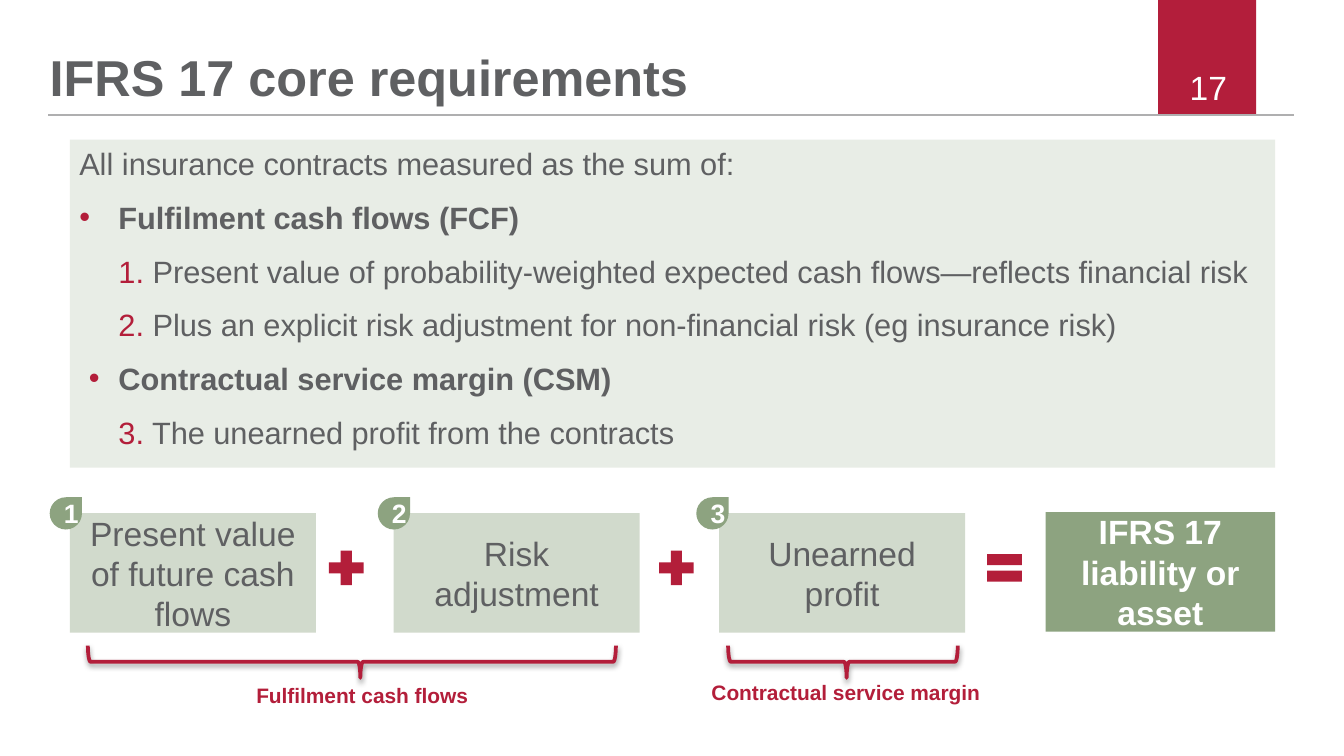
from typing import NamedTuple

from lxml import etree
from pptx import Presentation
from pptx.dml.color import RGBColor
from pptx.enum.shapes import MSO_CONNECTOR, MSO_SHAPE
from pptx.enum.text import MSO_ANCHOR, MSO_AUTO_SIZE, PP_ALIGN
from pptx.oxml.ns import qn
from pptx.util import Cm, Pt

RECT, TEAR = MSO_SHAPE.RECTANGLE, MSO_SHAPE.TEAR
PLUS, EQUAL = MSO_SHAPE.MATH_PLUS, MSO_SHAPE.MATH_EQUAL
BRACE = MSO_SHAPE.RIGHT_BRACE
LEFT, MID, RIGHT = PP_ALIGN.LEFT, PP_ALIGN.CENTER, PP_ALIGN.RIGHT
TOP, CENTRE, BOTTOM = MSO_ANCHOR.TOP, MSO_ANCHOR.MIDDLE, MSO_ANCHOR.BOTTOM
GROW = MSO_AUTO_SIZE.SHAPE_TO_FIT_TEXT

RED, GREY, WHITE = "B31E3A", "5F6062", "FFFFFF"
PALE, SOFT, GREEN = "E8EDE6", "D1DACC", "8DA380"
FONT = "Arial"


class Area(NamedTuple):
    """Place and size in centimetres."""
    x: float
    y: float
    w: float
    h: float


class Style(NamedTuple):
    size: float
    color: str
    bold: bool = False
    align: PP_ALIGN = MID


class Item(NamedTuple):
    """Line of the panel: red number, text, and indents in centimetres."""
    mark: str
    text: str
    bold: bool = False
    level: int = 0
    left: float = 0
    hang: float = 0


class Term(NamedTuple):
    text: str
    x: float
    badge: float


class Group(NamedTuple):
    """Brace below the terms, with its label."""
    text: str
    mid: float
    span: float
    x: float
    y: float


ITEMS = [
    Item("", "All insurance contracts measured as the sum of:"),
    Item("", "Fulfilment cash flows (FCF)", True, 1, 0.74, -0.74),
    Item("1.", " Present value of probability-weighted expected cash flows"
         "—reflects financial risk", False, 2, 0.74),
    Item("2.", " Plus an explicit risk adjustment for non-financial risk "
         "(eg insurance risk)", False, 2, 0.74),
    Item("", "Contractual service margin (CSM)", True, 1, 0.74, -0.56),
    Item("3.", " The unearned profit from the contracts", False, 2, 0.74),
]
TERMS = [
    Term("Present value of future cash flows", 1.32, 0.94),
    Term("Risk adjustment", 7.44, 7.14),
    Term("Unearned profit", 13.59, 13.16),
]
SIGNS = [(PLUS, 6.1), (PLUS, 12.34), (EQUAL, 18.54)]
GROUPS = [
    Group("Fulfilment cash flows", 6.65, 9.98, 3.1, 12.8),
    Group("Contractual service margin", 15.93, 4.34, 12.24, 12.75),
]


def rgb(code: str) -> RGBColor:
    return RGBColor.from_string(code)


def place(area: Area) -> list:
    return [Cm(v) for v in area]


def paint(font, style: Style) -> None:
    font.name, font.size, font.bold = FONT, Pt(style.size), style.bold
    font.color.rgb = rgb(style.color)


def frame(shape, anchor: MSO_ANCHOR, side: float = 0.18, edge: float = 0.1):
    text = shape.text_frame
    text.word_wrap, text.vertical_anchor = True, anchor
    text.margin_left = text.margin_right = Cm(side)
    text.margin_top = text.margin_bottom = Cm(edge)
    return text


def write(shape, words: str, style: Style, anchor: MSO_ANCHOR = CENTRE,
          **pad: float):
    text = frame(shape, anchor, **pad)
    text.text = words
    line = text.paragraphs[0]
    line.alignment = style.align
    paint(line.runs[0].font, style)
    return text


def block(slide, kind: MSO_SHAPE, area: Area, fill: str):
    shape = slide.shapes.add_shape(kind, *place(area))
    shape.shadow.inherit = False
    shape.fill.solid()
    shape.fill.fore_color.rgb = rgb(fill)
    shape.line.fill.background()
    return shape


def bullet(line) -> None:
    props = line._p.get_or_add_pPr()
    tint = etree.SubElement(props, qn("a:buClr"))
    etree.SubElement(tint, qn("a:srgbClr"), val=RED)
    etree.SubElement(props, qn("a:buFont"), typeface=FONT)
    etree.SubElement(props, qn("a:buChar"), char="•")


def entry(line, item: Item, first: bool) -> None:
    line.level, line.alignment = item.level, LEFT
    line.space_before, line.space_after = Pt(0 if first else 4.5), Pt(4.5)
    props = line._p.get_or_add_pPr()
    props.set("marL", str(Cm(item.left)))
    props.set("indent", str(Cm(item.hang)))
    if item.hang:
        bullet(line)
    for words, color in ((item.mark, RED), (item.text, GREY)):
        if words:
            run = line.add_run()
            run.text = words
            paint(run.font, Style(16.5, color, item.bold))


def brace(slide, group: Group) -> None:
    wide, mid = 0.61, 12.51
    area = Area(group.mid - wide / 2, mid - group.span / 2, wide, group.span)
    shape = slide.shapes.add_shape(BRACE, *place(area))
    shape.rotation = 90
    shape.adjustments[1] = 0.484
    shape.fill.background()
    shape.line.color.rgb, shape.line.width = rgb(RED), Pt(2)
    # Soft shadow straight down
    shape.shadow.inherit = False
    glow = etree.SubElement(
        shape._element.spPr.find(qn("a:effectLst")), qn("a:outerShdw"),
        blurRad=str(Pt(3.1)), dist=str(Pt(1.6)), dir="5400000",
        rotWithShape="0")
    tint = etree.SubElement(glow, qn("a:srgbClr"), val="000000")
    etree.SubElement(tint, qn("a:alpha"), val="38000")


def main() -> None:
    deck = Presentation()
    deck.slide_width, deck.slide_height = Cm(25.4), Cm(14.29)
    slide = deck.slides.add_slide(deck.slide_layouts[5])

    # Page tab and rule
    block(slide, RECT, Area(21.89, 0, 1.85, 2.18), "B31E3B")
    rule = slide.shapes.add_connector(
        MSO_CONNECTOR.STRAIGHT, Cm(0.91), Cm(2.18), Cm(24.46), Cm(2.18))
    rule.line.color.rgb, rule.line.width = rgb("AFAFB0"), Pt(1.2)
    etree.SubElement(rule._element.spPr, qn("a:effectLst"))
    page = slide.shapes.add_textbox(*place(Area(17.5, 1.27, 5.92, 0.76)))
    write(page, "17", Style(18, WHITE, align=RIGHT), side=0.23)

    # Title
    title = slide.shapes.title
    title.left, title.top, title.width, title.height = place(
        Area(0.94, 0, 19.81, 2.03))
    head = write(title, "IFRS 17 core requirements",
                 Style(27, GREY, True, LEFT), BOTTOM, side=0, edge=0)
    head.auto_size = MSO_AUTO_SIZE.NONE
    head.paragraphs[0].line_spacing = 0.9

    # Panel of requirements
    panel = block(slide, RECT, Area(1.32, 2.64, 22.78, 6.2), PALE)
    text = frame(panel, TOP)
    text.auto_size = GROW
    for n, item in enumerate(ITEMS):
        line = text.add_paragraph() if n else text.paragraphs[0]
        entry(line, item, n == 0)

    # Sum: terms, result and signs
    for term in TERMS:
        box = block(slide, RECT, Area(term.x, 9.7, 4.65, 2.26), SOFT)
        write(box, term.text, Style(18, GREY))
    total = block(slide, RECT, Area(19.76, 9.68, 4.34, 2.26), GREEN)
    write(total, "IFRS 17 liability or asset", Style(18, WHITE, True))
    for kind, x in SIGNS:
        block(slide, kind, Area(x, 10.29, 0.89, 0.89), RED)

    # Braces and labels
    for group in GROUPS:
        brace(slide, group)
        label = slide.shapes.add_textbox(
            *place(Area(group.x, group.y, 7.49, 0.69)))
        write(label, group.text, Style(11.2, RED, True), TOP).auto_size = GROW

    # Numbered badges
    for n, term in enumerate(TERMS, 1):
        badge = block(slide, TEAR, Area(term.badge, 9.4, 0.61, 0.61), GREEN)
        write(badge, str(n), Style(14.2, WHITE, True))

    deck.save("out.pptx")


if __name__ == "__main__":
    main()
